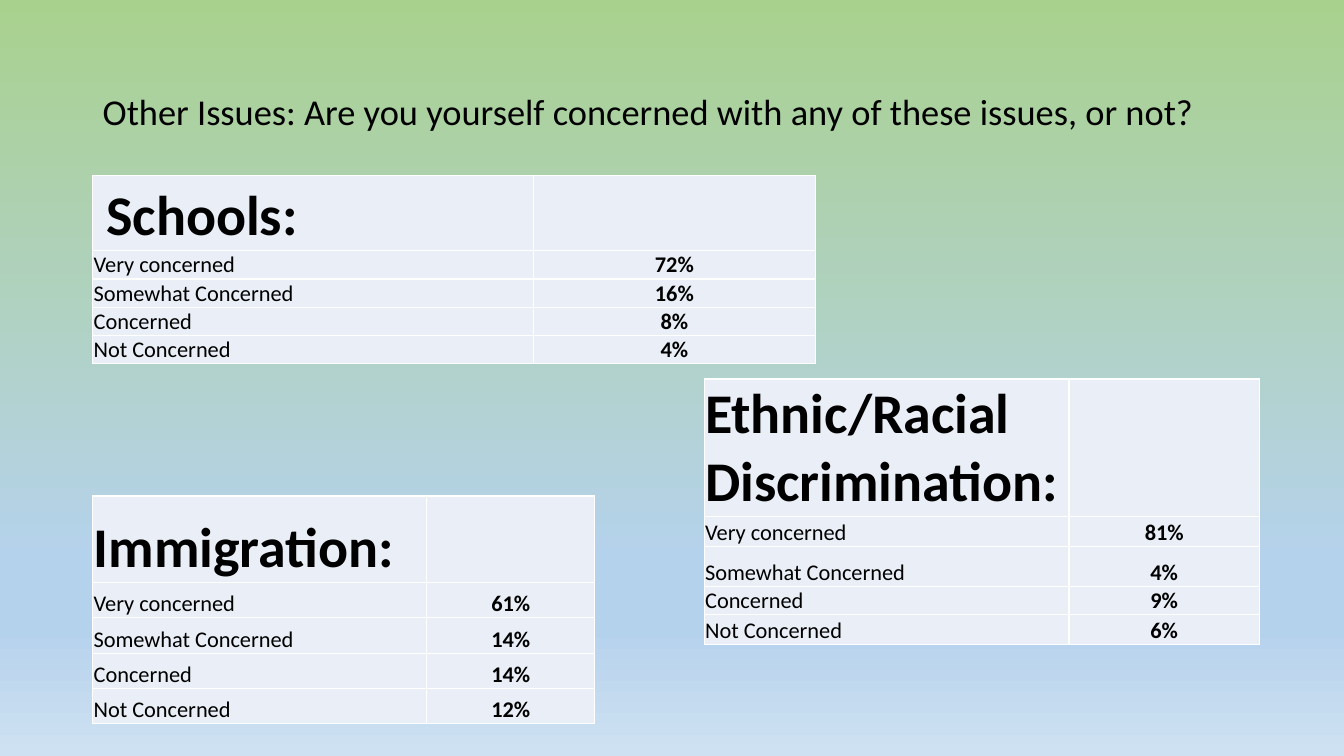
from dataclasses import dataclass

from lxml import etree
from pptx import Presentation
from pptx.dml.color import RGBColor
from pptx.enum.text import MSO_ANCHOR, PP_ALIGN
from pptx.oxml.ns import qn
from pptx.util import Cm, Pt

MIDDLE, BOTTOM = MSO_ANCHOR.MIDDLE, MSO_ANCHOR.BOTTOM
LEFT, CENTER = PP_ALIGN.LEFT, PP_ALIGN.CENTER
BLANK_LAYOUT = 6


@dataclass(frozen=True)
class Theme:
    font: str = "Calibri"
    text: str = "000000"
    cell: str = "EAEFF7"
    border: str = "FFFFFF"
    border_width: int = Pt(1)
    sky: tuple = ((0, "A9D18E"), (74, "B5D2EC"), (83, "B5D2EC"), (100, "CEE1F2"))
    title_size: int = 26
    heading_size: int = 40
    body_size: int = 16


def write_text(frame, text, *, theme, size, bold=False, align=LEFT, spacing=None):
    para = frame.paragraphs[0]
    para.alignment = align
    para.line_spacing = spacing
    span = para.add_run()
    span.text = text
    span.font.name = theme.font
    span.font.size = Pt(size)
    span.font.bold = bold
    span.font.color.rgb = RGBColor.from_string(theme.text)


class SlideBuilder:
    def __init__(self, page, theme):
        self.page = page
        self.theme = theme

    def background(self):
        fill = self.page.background.fill
        fill.gradient()
        fill.gradient_angle = 270
        stops = self.page.element.find(".//" + qn("a:gsLst"))
        for stop in list(stops):
            stops.remove(stop)
        for percent, color in self.theme.sky:
            stop = etree.SubElement(stops, qn("a:gs"), pos=str(percent * 1000))
            etree.SubElement(stop, qn("a:srgbClr"), val=color)

    def title(self, text, left, top, width, height):
        box = self.page.shapes.add_textbox(Cm(left), Cm(top), Cm(width), Cm(height))
        frame = box.text_frame
        frame.word_wrap = True
        frame.vertical_anchor = MIDDLE
        write_text(frame, text, theme=self.theme, size=self.theme.title_size, spacing=0.9)

    def style_cell(self, cell):
        cell.vertical_anchor = BOTTOM
        cell.margin_left = cell.margin_right = cell.margin_top = Cm(0.02)
        cell.margin_bottom = 0
        # Borders come before the fill in the cell properties
        properties = cell._tc.get_or_add_tcPr()
        for side in ("a:lnL", "a:lnR", "a:lnT", "a:lnB"):
            line = etree.SubElement(properties, qn(side), w=str(self.theme.border_width))
            paint = etree.SubElement(line, qn("a:solidFill"))
            etree.SubElement(paint, qn("a:srgbClr"), val=self.theme.border)
        cell.fill.solid()
        cell.fill.fore_color.rgb = RGBColor.from_string(self.theme.cell)

    def survey_table(self, heading, answers, left, top, widths, heights):
        theme = self.theme
        table = self.page.shapes.add_table(
            len(heights), len(widths), Cm(left), Cm(top),
            Cm(sum(widths)), Cm(sum(heights))).table
        table.first_row = table.horz_banding = False
        for column, width in zip(table.columns, widths):
            column.width = Cm(width)
        for row, height in zip(table.rows, heights):
            row.height = Cm(height)
        for cell in table.iter_cells():
            self.style_cell(cell)
        write_text(table.cell(0, 0).text_frame, heading, theme=theme,
                   size=theme.heading_size, bold=True)
        for index, (label, percent) in enumerate(zip(ANSWER_LABELS, answers), start=1):
            write_text(table.cell(index, 0).text_frame, label, theme=theme,
                       size=theme.body_size)
            write_text(table.cell(index, 1).text_frame, f"{percent}%", theme=theme,
                       size=theme.body_size, bold=True, align=CENTER)


ANSWER_LABELS = ("Very concerned", "Somewhat Concerned", "Concerned", "Not Concerned")
MARGIN = 2.34

# heading, percentages, left, top, column widths, row heights (cm)
SURVEYS = (
    ("Immigration:", (61, 14, 14, 12), MARGIN, 12.5,
     (8.41, 4.24), (2.18,) + (0.89,) * 4),
    (" Schools:", (72, 16, 8, 4), MARGIN, 4.42,
     (11.1, 7.11), (1.9,) + (0.71,) * 4),
    ("Ethnic/Racial Discrimination:", (81, 4, 9, 6), 17.75, 9.55,
     (9.19, 4.8), (3.47, 0.76, 0.99, 0.71, 0.76)),
)


def main():
    deck = Presentation()
    deck.slide_width, deck.slide_height = Cm(33.87), Cm(19.05)
    page = deck.slides.add_slide(deck.slide_layouts[BLANK_LAYOUT])
    builder = SlideBuilder(page, Theme())

    # Background and question
    builder.background()
    builder.title("Other Issues: Are you yourself concerned with any of these issues, or not?",
                  MARGIN, 1.02, 29.21, 3.68)

    # One table per issue
    for survey in SURVEYS:
        builder.survey_table(*survey)

    deck.save("out.pptx")


if __name__ == "__main__":
    main()
